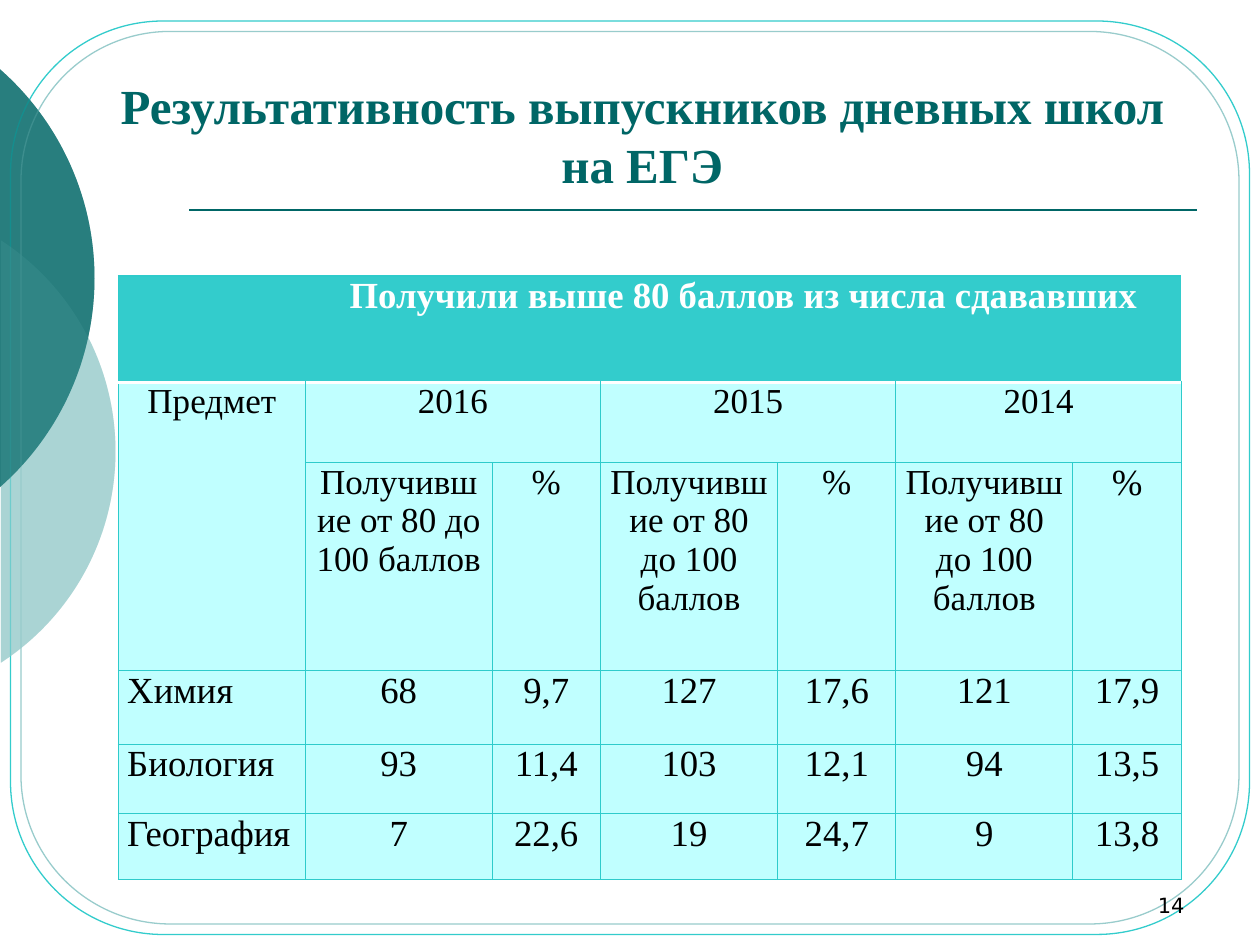
from math import acos, cos, sin, tan

from pptx import Presentation
from pptx.dml.color import RGBColor
from pptx.enum.shapes import MSO_CONNECTOR as CONNECTOR, MSO_SHAPE as SHAPE
from pptx.enum.text import MSO_ANCHOR as ANCHOR, PP_ALIGN as ALIGN
from pptx.oxml import parse_xml
from pptx.oxml.ns import nsdecls, qn
from pptx.util import Inches, Pt
from lxml.etree import SubElement

DARK_TEAL = RGBColor(0x00, 0x66, 0x66)
PALE_TEAL = RGBColor(0x99, 0xCC, 0xCC)
TURQUOISE = RGBColor(0x33, 0xCC, 0xCC)
GRID_LINE = RGBColor(0x2E, 0xCB, 0xCB)
CELL_FILL = RGBColor(0xC0, 0xFF, 0xFF)
WHITE = RGBColor(0xFF, 0xFF, 0xFF)
BLACK = RGBColor(0x00, 0x00, 0x00)
SERIF = "Times New Roman"

presentation = Presentation()
presentation.slide_width, presentation.slide_height = Inches(10), Inches(7.5)
slide = presentation.slides.add_slide(presentation.slide_layouts[6])
shapes = slide.shapes

# Grid of 120 columns and 90 rows with square units
UNIT = presentation.slide_width // 120


def units(*values):
    return [round(value * UNIT) for value in values]


def write_text(frame, text, size=21, font=SERIF, color=BLACK, bold=False,
               align=ALIGN.CENTER, anchor=ANCHOR.TOP):
    frame.word_wrap = True
    frame.vertical_anchor = anchor
    paragraph = frame.paragraphs[0]
    paragraph.alignment = align
    run = paragraph.add_run()
    run.text = text
    run.font.size, run.font.name, run.font.bold = Pt(size), font, bold
    run.font.color.rgb = color


# Circles cut by the left edge, one pair behind the frames and one in front
CIRCLES = [(-37, 19, 24, 0.1, PALE_TEAL, 58), (-44, 0, 26.5, -0.1, DARK_TEAL, 60)]
FRAMES = [(1, TURQUOISE), (2, PALE_TEAL)]
for layer in ("back", "front"):
    for left, top, radius, cut, color, opacity in CIRCLES:
        # Arc of two Bezier curves, measured from the circle's own box
        half_angle = acos((cut - left - radius) / radius)
        pull = 4 / 3 * tan(half_angle / 4)
        x, y = cos(half_angle), sin(half_angle)
        arc = [(x, -y), (x + pull * y, -y + pull * x), (1, -pull), (1, 0),
               (1, pull), (x + pull * y, y - pull * x), (x, y)]
        points = [units(radius * (1 + px), radius * (1 + py)) for px, py in arc]
        builder = shapes.build_freeform(*points[0])
        builder.add_line_segments([points[3], points[6]], close=True)
        segment = builder.convert_to_shape()
        segment.left, segment.top = units(left, top)
        segment.width = segment.height = round(2 * radius * UNIT)
        tags = [f'<a:pt x="{px}" y="{py}"/>' for px, py in points]
        outline = segment._element.spPr.find(".//" + qn("a:pathLst"))
        outline.clear()
        outline.append(parse_xml(
            f'<a:path {nsdecls("a")} w="{segment.width}" h="{segment.height}">'
            f'<a:moveTo>{tags[0]}</a:moveTo>'
            f'<a:cubicBezTo>{"".join(tags[1:4])}</a:cubicBezTo>'
            f'<a:cubicBezTo>{"".join(tags[4:])}</a:cubicBezTo><a:close/></a:path>'))
        segment.shadow.inherit = False
        segment.line.fill.background()
        segment.fill.solid()
        segment.fill.fore_color.rgb = color
        fill_color = segment._element.spPr.find(".//" + qn("a:srgbClr"))
        SubElement(fill_color, qn("a:alpha"), val=str(opacity * 1000))

    # Rounded frames and the rule under the title
    if layer == "back":
        for inset, color in FRAMES:
            frame = shapes.add_shape(
                SHAPE.ROUNDED_RECTANGLE,
                *units(inset, inset + 1, 120 - 2 * inset, 89 - 2 * inset))
            frame.adjustments[0] = 0.167
            frame.shadow.inherit = False
            frame.fill.background()
            frame.line.color.rgb, frame.line.width = color, Pt(0.75)
        rule = shapes.add_connector(CONNECTOR.STRAIGHT, *units(18, 20, 114, 20))
        rule.line.color.rgb, rule.line.width = DARK_TEAL, Pt(1)
        SubElement(rule._element.spPr, qn("a:effectLst"))

# Title and slide number
title = shapes.add_textbox(*units(8.42, 3.97, 105.5, 15))
write_text(title.text_frame, "Результативность выпускников дневных школ на ЕГЭ",
           size=28, color=DARK_TEAL, bold=True, anchor=ANCHOR.BOTTOM)
number = shapes.add_textbox(*units(86, 82, 28, 6))
write_text(number.text_frame, "14", size=12, font="DejaVu Sans",
           align=ALIGN.RIGHT, anchor=ANCHOR.BOTTOM)

# Results table
COLUMNS = units(17.8, 17.8, 10.3, 16.9, 11.25, 16.85, 10.35)
ROWS = units(10.15, 7.65, 19.8, 7, 6.6, 6.3)
SCORED = "Получившие от 80 до 100 баллов"
CELLS = [
    ["", "Получили выше 80 баллов из числа сдававших", "", "", "", "", ""],
    [" Предмет ", "2016", "", "2015", "", "2014", ""],
    ["", SCORED, "%", SCORED, "%", SCORED, "%"],
    ["Химия", "68", "9,7", "127", "17,6", "121", "17,9"],
    ["Биология", "93", "11,4", "103", "12,1", "94", "13,5"],
    ["География", "7", "22,6", "19", "24,7", "9", "13,8"],
]
table = shapes.add_table(len(ROWS), len(COLUMNS), *units(11.28, 26.28),
                         sum(COLUMNS), sum(ROWS)).table
for column, width in zip(table.columns, COLUMNS):
    column.width = width
for row, height in zip(table.rows, ROWS):
    row.height = height

# Merged headings: first and last cell as (row, column)
for first, last in [((0, 1), (0, 6)), ((1, 0), (2, 0)), ((1, 1), (1, 2)),
                    ((1, 3), (1, 4)), ((1, 5), (1, 6))]:
    table.cell(*first).merge(table.cell(*last))

for r, texts in enumerate(CELLS):
    for c, text in enumerate(texts):
        cell = table.cell(r, c)
        cell.margin_left = cell.margin_right = Inches(0.07)
        cell.margin_top = cell.margin_bottom = 0

        # Borders: a white rule below the header, no line inside it
        borders = dict.fromkeys(("lnL", "lnR", "lnT", "lnB"), (GRID_LINE, 0.75))
        if r == 0:
            borders["lnB"] = (WHITE, 2)
            if c > 0:
                borders["lnL"] = None
            if c < len(COLUMNS) - 1:
                borders["lnR"] = None
        elif r == 1:
            borders["lnT"] = (WHITE, 2)
        properties = cell._tc.get_or_add_tcPr()
        for side, style in borders.items():
            color, width = style or (WHITE, 0)
            paint = (f'<a:solidFill><a:srgbClr val="{color}"/></a:solidFill>'
                     if style else "<a:noFill/>")
            properties.append(parse_xml(
                f'<a:{side} {nsdecls("a")} w="{Pt(width)}">{paint}</a:{side}>'))

        cell.fill.solid()
        cell.fill.fore_color.rgb = CELL_FILL if r else TURQUOISE
        if text:
            subheading = r in (1, 2) and (r, c) != (2, 6)
            write_text(cell.text_frame, text, size=20 if subheading else 21,
                       color=BLACK if r else WHITE, bold=r == 0,
                       align=ALIGN.LEFT if r > 2 and c == 0 else ALIGN.CENTER)

presentation.save("out.pptx")
